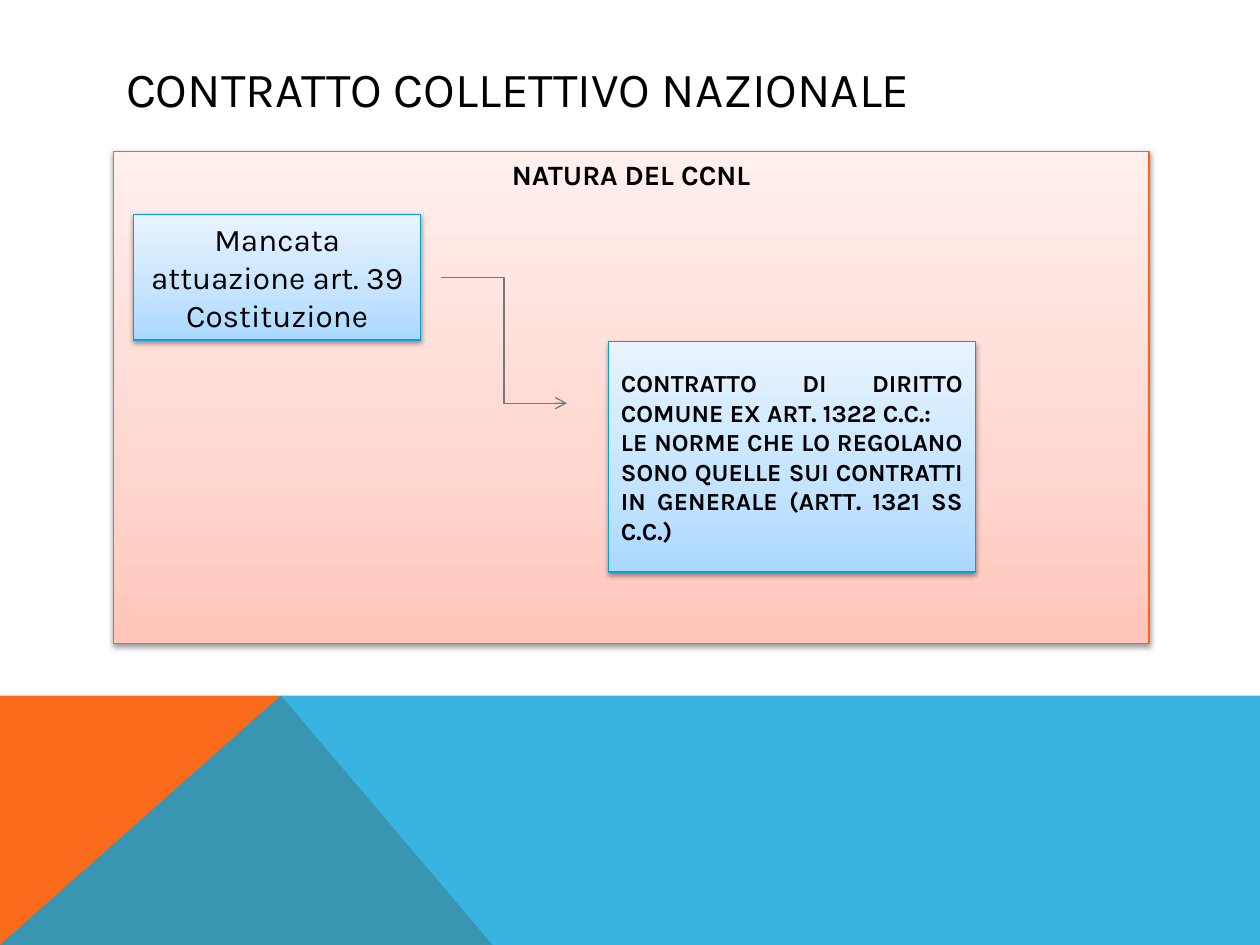
from lxml.etree import SubElement
from copy import deepcopy
from pptx import Presentation
from pptx.dml.color import RGBColor
from pptx.enum.shapes import MSO_CONNECTOR as Connector, MSO_SHAPE as Shape
from pptx.enum.text import MSO_ANCHOR as Anchor, MSO_AUTO_SIZE as AutoSize, PP_ALIGN as Align
from pptx.oxml.ns import qn
from pptx.util import Inches, Pt

COLORS = {
    "text": "000000",
    "orange": "F96A1B",
    "blue": "08A1D9",
    "panel_line": "F96615",
    "box_line": "03A0D9",
    "arrow": "76787B",
    "shadow": "000000",
}
# Gradient stops at 0, 35 and 100 %, from bottom to top
GRADIENTS = {
    "panel": ("FFC5BA", "FFD6CF", "FFEFED"),
    "box": ("ABD8FF", "C3E3FF", "E8F4FF"),
}
STOPS = (0, 0.35, 1)
COLUMNS, ROWS = 100, 75


def rgb(name):
    return RGBColor.from_string(COLORS[name])


class SlideBuilder:
    font = "Karla"

    def __init__(self, presentation):
        self.column = presentation.slide_width / COLUMNS
        self.row = presentation.slide_height / ROWS
        self.slide = presentation.slides.add_slide(presentation.slide_layouts[1])

    def scale(self, *lengths):
        """Turn alternating columns and rows into slide units."""
        return [round(n * (self.row if i % 2 else self.column)) for i, n in enumerate(lengths)]

    def polygon(self, points, color, opacity=100):
        start, *others = [self.scale(*point) for point in points]
        builder = self.slide.shapes.build_freeform(*start)
        builder.add_line_segments(others, close=True)
        shape = builder.convert_to_shape()
        shape.shadow.inherit = False
        shape.fill.solid()
        shape.fill.fore_color.rgb = rgb(color)
        shape.line.fill.background()
        if opacity < 100:
            color_element = shape._element.spPr.find(".//" + qn("a:srgbClr"))
            SubElement(color_element, qn("a:alpha"), val=str(opacity * 1000))

    def placeholder(self, index, box):
        """Move a template placeholder and bring it to the front."""
        shape = self.slide.placeholders[index]
        shape.left, shape.top, shape.width, shape.height = self.scale(*box)
        self.slide.shapes._spTree.append(shape._element)
        return shape

    def set_text(self, shape, lines, size, align, anchor=Anchor.MIDDLE, bold=False):
        frame = shape.text_frame
        frame.text = "\n".join(lines)
        frame.word_wrap = True
        frame.auto_size = AutoSize.NONE
        frame.vertical_anchor = anchor
        for paragraph in frame.paragraphs:
            paragraph.alignment = align
            font = paragraph.font
            font.name, font.size, font.bold = self.font, Pt(size), bold
            font.color.rgb = rgb("text")

    def decorate(self, shape, style):
        """Give a shape the gradient, outline and soft shadow of a style."""
        shape.fill.gradient()
        shape.fill.gradient_angle = 90
        stop_list = shape._element.spPr.find(".//" + qn("a:gsLst"))
        stop_list.append(deepcopy(stop_list[-1]))
        for stop, position, color in zip(shape.fill.gradient_stops, STOPS, GRADIENTS[style]):
            stop.position = position
            stop.color.rgb = RGBColor.from_string(color)
        shape.line.color.rgb = rgb(style + "_line")
        shape.line.width = Pt(0.75)
        shape.shadow.inherit = False
        effects = shape._element.spPr.find(qn("a:effectLst"))
        shadow = SubElement(effects, qn("a:outerShdw"), blurRad=str(int(Pt(3.1))),
                            dist=str(int(Pt(1.6))), dir="5400000", rotWithShape="0")
        color = SubElement(shadow, qn("a:srgbClr"), val=COLORS["shadow"])
        SubElement(color, qn("a:alpha"), val="38000")

    def title(self, text, box):
        self.set_text(self.placeholder(0, box), [text], 28, Align.LEFT)

    def panel(self, heading, box):
        shape = self.placeholder(1, box)
        self.decorate(shape, "panel")
        self.set_text(shape, [heading], 16, Align.CENTER, Anchor.TOP, bold=True)
        paragraph = shape.text_frame.paragraphs[0]
        paragraph.space_before = Pt(8)
        properties = paragraph._p.get_or_add_pPr()
        properties.set("marL", "0")
        properties.set("indent", "0")
        bullet = SubElement(properties, qn("a:buNone"))
        properties.find(qn("a:defRPr")).addprevious(bullet)

    def box(self, lines, box, size, align, bold=False):
        shape = self.slide.shapes.add_shape(Shape.RECTANGLE, *self.scale(*box))
        self.decorate(shape, "box")
        self.set_text(shape, lines, size, align, bold=bold)

    def elbow_arrow(self, start, end):
        connector = self.slide.shapes.add_connector(
            Connector.ELBOW, *self.scale(*start, *end))
        connector.line.color.rgb = rgb("arrow")
        connector.line.width = Pt(0.75)
        properties = connector._element.spPr
        SubElement(properties.find(qn("a:ln")), qn("a:tailEnd"), type="arrow")
        SubElement(properties, qn("a:effectLst"))


def main():
    presentation = Presentation()
    presentation.slide_width, presentation.slide_height = Inches(10), Inches(7.5)
    builder = SlideBuilder(presentation)

    # Coloured band at the foot
    horizon, peak = 55.2, 22.3
    builder.polygon([(0, ROWS), (0, horizon), (peak, horizon), (39.1, ROWS)], "orange")
    builder.polygon([(0, ROWS), (peak, horizon), (COLUMNS, horizon), (COLUMNS, ROWS)],
                    "blue", opacity=80)

    # Title and panel share the same margins
    left, width = 9, 82.2
    builder.title("CONTRATTO COLLETTIVO NAZIONALE", (left, 4, width, 6))
    builder.panel("NATURA DEL CCNL", (left, 12, width, 39.1))

    # Cause, arrow and consequence
    builder.box(["Mancata attuazione art. 39 Costituzione"],
                (10.6, 17, 22.8, 10), 18, Align.CENTER)
    builder.elbow_arrow((35, 22), (45, 32))
    builder.box(["CONTRATTO DI DIRITTO COMUNE EX ART. 1322 C.C.:",
                 "LE NORME CHE LO REGOLANO SONO QUELLE SUI CONTRATTI "
                 "IN GENERALE (ARTT. 1321 SS C.C.)"],
                (48.3, 27.1, 29.1, 18.3), 14, Align.JUSTIFY, bold=True)

    presentation.save("out.pptx")


if __name__ == "__main__":
    main()
